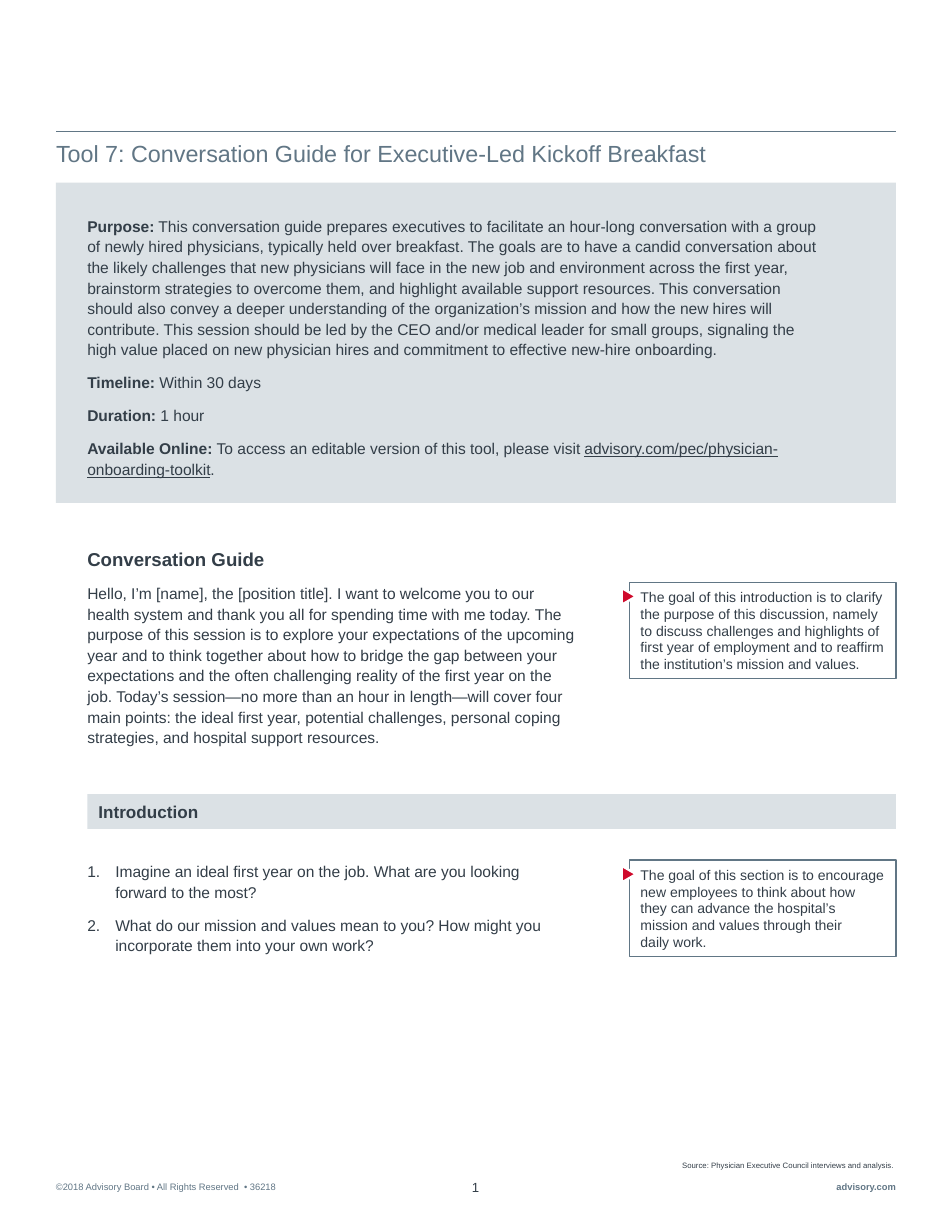
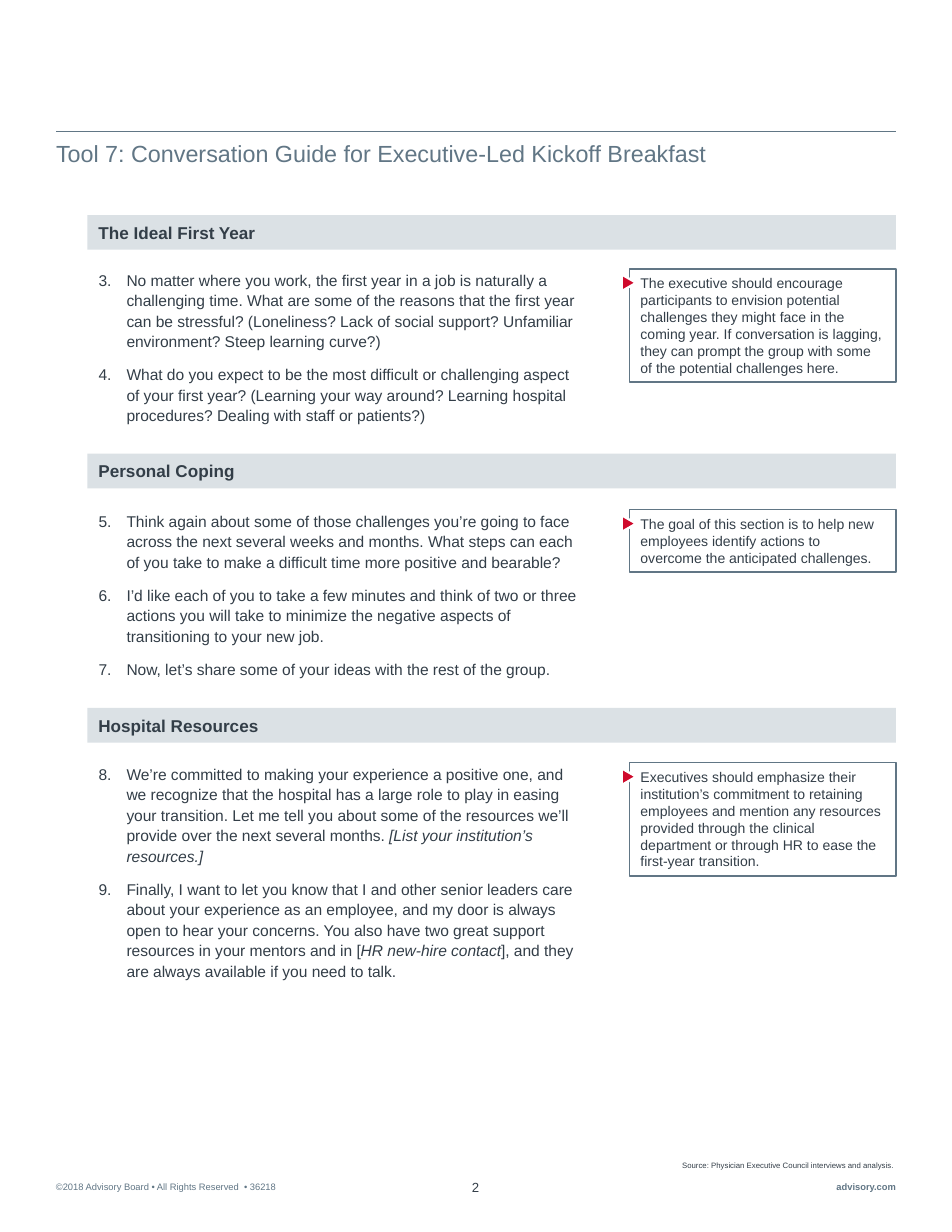
"""Build the two-page conversation guide for an executive-led kickoff breakfast."""
import copy
from dataclasses import dataclass

import pptx
import pptx.dml.color
import pptx.enum.shapes
import pptx.enum.text
import pptx.oxml
import pptx.oxml.ns
import pptx.util

ALIGN = pptx.enum.text.PP_ALIGN
ANCHOR = pptx.enum.text.MSO_ANCHOR
SHAPE = pptx.enum.shapes.MSO_SHAPE


@dataclass(frozen=True)
class Theme:
    font: str = "Arial"
    ink: str = "333E48"
    slate: str = "617685"
    mist: str = "DBE1E5"
    red: str = "CF0A2C"
    white: str = "FFFFFF"
    title: float = 15
    heading: float = 12
    band: float = 11
    body: float = 10
    note: float = 9
    number: float = 8.5
    footer: float = 6
    source: float = 5


THEME = Theme()
PX = 9144
PAGE_WIDTH, PAGE_HEIGHT = 850, 1100
LEFT, RIGHT, INDENT = 50, 800, 78
NOTE_LEFT, NOTE_LINE, NOTE_PADDING = 562, 15, 11
COLUMN_WIDTH, BAND_HEIGHT, HANG = 427, 31, 25

TITLE = "Tool 7: Conversation Guide for Executive-Led Kickoff Breakfast"
SOURCE = "Source: Physician Executive Council interviews and analysis."
COPYRIGHT = "©2018 Advisory Board • All Rights Reserved  • 36218"
SITE = "advisory.com"

PURPOSE = [
    [("Purpose:", "b"),
     " This conversation guide prepares executives to facilitate an hour-long conversation with a group of "
     "newly hired physicians, typically held over breakfast. The goals are to have a candid conversation about "
     "the likely challenges that new physicians will face in the new job and environment across the first year, "
     "brainstorm strategies to overcome them, and highlight available support resources. This conversation "
     "should also convey a deeper understanding of the organization’s mission and how the new hires will "
     "contribute. This session should be led by the CEO and/or medical leader for small groups, signaling the "
     "high value placed on new physician hires and commitment to effective new-hire onboarding."],
    [("Timeline:", "b"), " Within 30 days"],
    [("Duration:", "b"), " 1 hour"],
    [("Available Online: ", "b"), "To access an editable version of this tool, please visit ",
     ("advisory.com/pec/physician-onboarding-toolkit", "u"), "."],
]

GUIDE_HEADING = "Conversation Guide"
WELCOME = (
    "Hello, I’m [name], the [position title]. I want to welcome you to our health system and thank you all for "
    "spending time with me today. The purpose of this session is to explore your expectations of the upcoming "
    "year and to think together about how to bridge the gap between your expectations and the often challenging "
    "reality of the first year on the job. Today’s session—no more than an hour in length—will cover four main "
    "points: the ideal first year, potential challenges, personal coping strategies, and hospital support "
    "resources.")
WELCOME_NOTE = (
    "The goal of this introduction is to clarify the purpose of this discussion, namely to discuss challenges "
    "and highlights of first year of employment and to reaffirm the institution’s mission and values.")

INTRODUCTION = {
    "name": "Introduction", "band": 709, "top": 768, "left": 78, "note_lines": 5,
    "questions": [
        ["Imagine an ideal first year on the job. What are you looking forward to the most?"],
        ["What do our mission and values mean to you? How might you incorporate them into your own work?"],
    ],
    "note": ["The goal of this section is to encourage new employees to think about how they can advance the "
             "hospital’s mission and values through their ", "\n", "daily work."],
}

LATER_SECTIONS = [
    {"name": "The Ideal First Year", "band": 192, "top": 240, "left": 88, "note_lines": 6,
     "questions": [
         ["No matter where you work, the first year in a job is naturally a challenging time. What are some of "
          "the reasons that the first year can be stressful? (Loneliness? Lack of social support? Unfamiliar "
          "environment? Steep learning curve?)"],
         ["What do you expect to be the most difficult or challenging aspect of your first year? (Learning your "
          "way around? Learning hospital procedures? Dealing with staff or patients?)"],
     ],
     "note": ["The executive should encourage participants to envision potential challenges they might face in "
              "the coming year. If conversation is lagging, they can prompt the group with some of the potential "
              "challenges here."]},
    {"name": "Personal Coping", "band": 405, "top": 455, "left": 88, "note_lines": 3,
     "questions": [
         ["Think again about some of those challenges you’re going to face across the next several weeks and "
          "months. What steps can each of you take to make a difficult time more positive and bearable?"],
         ["I’d like each of you to take a few minutes and think of two or three actions you will take to "
          "minimize the negative aspects of transitioning to your new job."],
         ["Now, let’s share some of your ideas with the rest of the group."],
     ],
     "note": ["The goal of this section is to help new employees identify actions to overcome the anticipated "
              "challenges."]},
    {"name": "Hospital Resources", "band": 632, "top": 681, "left": 88, "note_lines": 6,
     "questions": [
         ["We’re committed to making your experience a positive one, and we recognize that the hospital has a "
          "large role to play in easing your transition. Let me tell you about some of the resources we’ll "
          "provide over the next several months. ", ("[List your institution’s resources.]", "i")],
         ["Finally, I want to let you know that I and other senior leaders care about your experience as an "
          "employee, and my door is always open to hear your concerns. You also have two great support resources "
          "in your mentors and in [", ("HR new-hire contact", "i"),
          "], and they are always available if you need to talk."],
     ],
     "note": ["Executives should emphasize their institution’s commitment to retaining employees and mention any "
              "resources provided through the clinical department or through HR to ease the first-year "
              "transition."]},
]


def px(*lengths):
    return [length * PX for length in lengths]


def rgb(code):
    return pptx.dml.color.RGBColor.from_string(code)


def write(box, paragraphs, size=THEME.body, color=THEME.ink, bold=False, align=ALIGN.LEFT,
          anchor=ANCHOR.TOP, margins=(0, 0), leading=1.0, before=0, start=None):
    frame = box.text_frame
    frame.word_wrap = True
    frame.auto_size = pptx.enum.text.MSO_AUTO_SIZE.NONE
    frame.vertical_anchor = anchor
    frame.margin_left = frame.margin_right = margins[0] * PX
    frame.margin_top = frame.margin_bottom = margins[1] * PX
    for index, spans in enumerate(paragraphs):
        para = frame.add_paragraph() if index else frame.paragraphs[0]
        para.alignment = align
        para.line_spacing = leading
        para.space_before = pptx.util.Pt(before if index else 0)
        if start:
            properties = para._p.get_or_add_pPr()
            properties.set("marL", str(HANG * PX))
            properties.set("indent", str(-HANG * PX))
            number = pptx.oxml.parse_xml(
                f'<a:buAutoNum {pptx.oxml.ns.nsdecls("a")} type="arabicPeriod" startAt="{start}"/>')
            properties.append(number)
        for span in [spans] if isinstance(spans, str) else spans:
            text, style = (span, "") if isinstance(span, str) else span
            if text == "\n":
                para.add_line_break()
                para._p[-1].append(copy.deepcopy(run._r.rPr))
                continue
            run = para.add_run()
            run.text = text
            run.font.name = THEME.font
            run.font.size = pptx.util.Pt(size)
            run.font.color.rgb = rgb(color)
            run.font.bold = bold or "b" in style
            run.font.italic = "i" in style
            run.font.underline = "u" in style


def add_text(page, area, paragraphs, **style):
    box = page.shapes.add_textbox(*px(*area))
    write(box, paragraphs, **style)


def add_block(page, area, fill, line=None, weight=1.0, kind=SHAPE.RECTANGLE):
    block = page.shapes.add_shape(kind, *px(*area))
    block.shadow.inherit = False
    block.fill.solid()
    block.fill.fore_color.rgb = rgb(fill)
    if line:
        block.line.color.rgb = rgb(line)
        block.line.width = pptx.util.Pt(weight)
    else:
        block.line.fill.background()
    return block


def add_note(page, top, spans, lines):
    area = (NOTE_LEFT, top, RIGHT - NOTE_LEFT, lines * NOTE_LINE + NOTE_PADDING)
    note = add_block(page, area, THEME.white, THEME.slate)
    write(note, [spans], size=THEME.note, anchor=ANCHOR.MIDDLE, margins=(10, 5))
    marker = add_block(page, (NOTE_LEFT - 8, top + 6, 15, 13), THEME.red, THEME.white, 1.5,
                       SHAPE.ISOSCELES_TRIANGLE)
    marker.rotation = 90


def add_section(page, section, start):
    band = add_block(page, (INDENT, section["band"], RIGHT - INDENT, BAND_HEIGHT), THEME.mist)
    write(band, [section["name"]], size=THEME.band, bold=True, anchor=ANCHOR.MIDDLE, margins=(10, 5))
    add_text(page, (section["left"], section["top"], COLUMN_WIDTH, 119), section["questions"],
             leading=1.1, before=8, start=start)
    add_note(page, section["top"], section["note"], section["note_lines"])
    return start + len(section["questions"])


def add_page(deck):
    page = deck.slides.add_slide(deck.slide_layouts[5])
    title = page.shapes.title
    title.left, title.top, title.width, title.height = px(LEFT, 124, RIGHT - LEFT, 25)
    write(title, [TITLE], size=THEME.title, color=THEME.slate)
    rule = page.shapes.add_connector(pptx.enum.shapes.MSO_CONNECTOR.STRAIGHT, *px(LEFT, 117, RIGHT, 117))
    rule.line.color.rgb = rgb(THEME.slate)
    rule.line.width = pptx.util.Pt(0.5)
    rule._element.spPr.append(pptx.oxml.parse_xml(f'<a:effectLst {pptx.oxml.ns.nsdecls("a")}/>'))
    add_text(page, (609, 1028, 191, 17), [SOURCE], size=THEME.source, anchor=ANCHOR.BOTTOM)
    add_text(page, (LEFT, 1055, 220, 10), [COPYRIGHT], size=THEME.footer, color=THEME.slate)
    add_text(page, (402, 1053, 45, 14), [str(len(deck.slides))], size=THEME.number, align=ALIGN.CENTER)
    add_text(page, (714, 1055, 86, 10), [SITE], size=THEME.footer, color=THEME.slate, bold=True,
             align=ALIGN.RIGHT)
    return page


def main():
    deck = pptx.Presentation()
    deck.slide_width, deck.slide_height = px(PAGE_WIDTH, PAGE_HEIGHT)

    page = add_page(deck)
    add_block(page, (LEFT, 163, RIGHT - LEFT, 286), THEME.mist)
    add_text(page, (INDENT, 192, 660, 237), PURPOSE, leading=1.1, before=8)
    add_text(page, (INDENT, 489, 503, 20), [GUIDE_HEADING], size=THEME.heading, bold=True)
    add_text(page, (INDENT, 520, 437, 174), [WELCOME], leading=1.1)
    add_note(page, 520, WELCOME_NOTE, 5)
    start = add_section(page, INTRODUCTION, 1)

    page = add_page(deck)
    for section in LATER_SECTIONS:
        start = add_section(page, section, start)

    deck.save("out.pptx")


if __name__ == "__main__":
    main()
